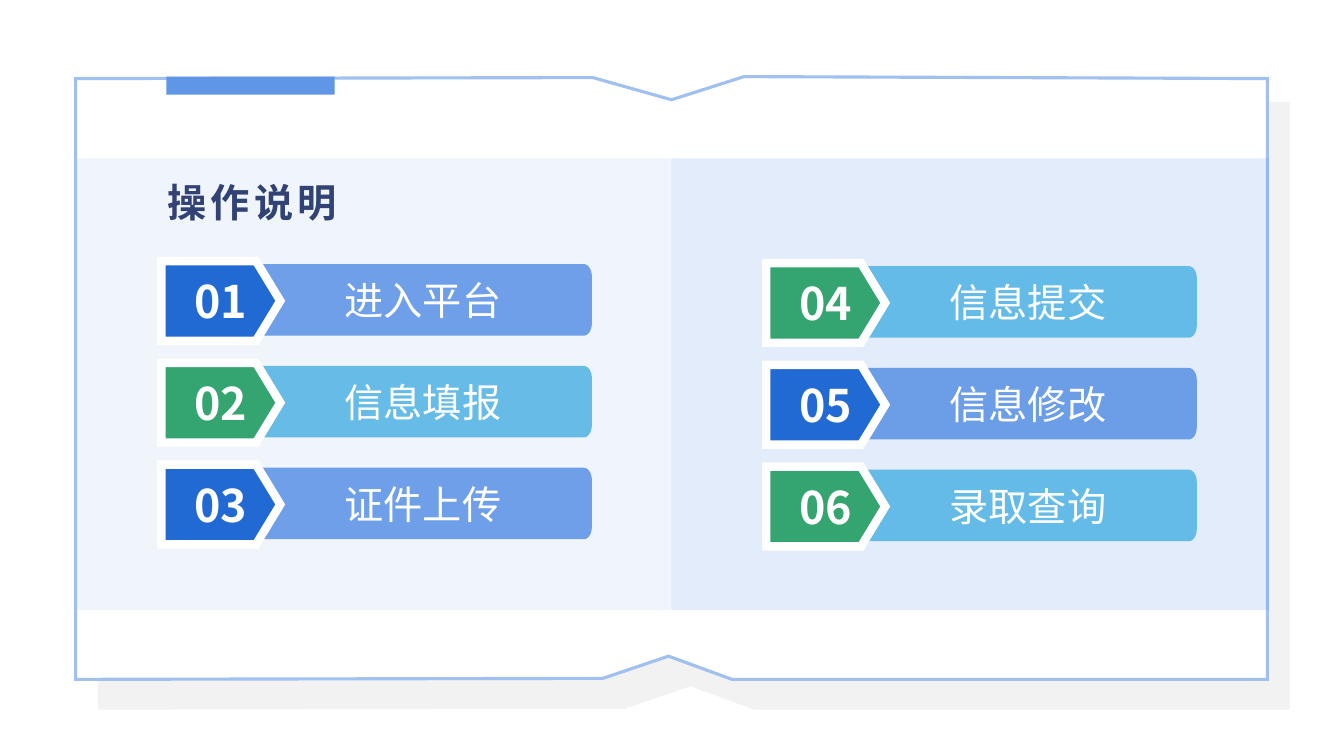
from math import cos, pi, sin

from lxml import etree
from pptx import Presentation
from pptx.dml.color import RGBColor
from pptx.enum.shapes import MSO_SHAPE
from pptx.enum.text import MSO_ANCHOR, PP_ALIGN
from pptx.oxml.ns import qn
from pptx.util import Inches, Pt

RECT = MSO_SHAPE.RECTANGLE
CENTER = PP_ALIGN.CENTER
MIDDLE, BOTTOM = MSO_ANCHOR.MIDDLE, MSO_ANCHOR.BOTTOM

FONT = "Noto Sans CJK SC"
COLORS = {
    "white": "FFFFFF", "shadow": "F2F2F2", "outline": "A0C0F0",
    "soft_blue": "6096E6", "sky": "58B6E5", "blue": "2169D3",
    "green": "34A471", "navy": "324274",
}


class Deck:
    """Holds the style and the current slide."""

    def __init__(self, prs):
        self.s = prs.slides.add_slide(prs.slide_layouts[5])

    def color(self, name):
        return RGBColor.from_string(COLORS[name])

    def style(self, sp, fill, alpha=100, line=None, width=0):
        sp.shadow.inherit = False
        sp.fill.solid()
        sp.fill.fore_color.rgb = self.color(fill)
        spPr = sp._element.spPr
        if alpha < 100:
            clr = spPr.find(qn("a:solidFill"))[0]
            etree.SubElement(clr, qn("a:alpha"), val=str(alpha * 1000))
        if line:
            sp.line.color.rgb = self.color(line)
            sp.line.width = Pt(width)
            etree.SubElement(spPr.find(qn("a:ln")), qn("a:miter"), lim="800000")
        else:
            sp.line.fill.background()

    def text(self, sp, text, size, color, bold=False, anchor=MIDDLE, inset=(0, 0), spacing=0):
        tf = sp.text_frame
        tf.word_wrap = True
        tf.vertical_anchor = anchor
        tf.margin_left = tf.margin_right = Inches(inset[0])
        tf.margin_top = tf.margin_bottom = Inches(inset[1])
        p = tf.paragraphs[0]
        p.alignment = CENTER
        r = p.add_run()
        r.text = text
        r.font.size = Pt(size)
        r.font.bold = bold
        r.font.name = FONT
        r.font.color.rgb = self.color(color)
        rPr = r._r.get_or_add_rPr()
        etree.SubElement(rPr, qn("a:ea"), typeface=FONT)
        if spacing:
            rPr.set("spc", str(spacing * 100))

    def title(self, text, x, y, w, h):
        sp = self.s.shapes.title
        sp.left, sp.top, sp.width, sp.height = map(Inches, (x, y, w, h))
        self.text(sp, text, 28, "navy", True, BOTTOM, (0.1, 0.05), 3)
        # Bring the title in front of the panels
        self.s.shapes._spTree.append(sp._element)

    def rect(self, x, y, w, h, fill, alpha=100):
        sp = self.s.shapes.add_shape(RECT, *map(Inches, (x, y, w, h)))
        self.style(sp, fill, alpha)

    def outline(self, points, fill, alpha=100, line=None, width=0):
        start, *rest = [(Inches(x), Inches(y)) for x, y in points]
        fb = self.s.shapes.build_freeform(*start)
        fb.add_line_segments(rest, close=True)
        sp = fb.convert_to_shape()
        self.style(sp, fill, alpha, line, width)
        return sp

    def bar(self, x, y, text, fill):
        w, h, rx, ry, steps = 3.35, 0.71, 0.08, 0.12, 8
        angles = [i * pi / 2 / steps for i in range(steps + 1)]
        top = [(x + w - rx + rx * sin(a), y + ry - ry * cos(a)) for a in angles]
        bottom = [(px, 2 * y + h - py) for px, py in reversed(top)]
        sp = self.outline([(x, y), *top, *bottom, (x, y + h)], fill, 90)
        self.text(sp, text, 28, "white")

    def badge(self, x, y, text, fill):
        w, h, tip = 1.18, 0.79, 0.24
        points = [(x, y), (x + w - tip, y), (x + w, y + h / 2),
                  (x + w - tip, y + h), (x, y + h)]
        sp = self.outline(points, fill, line="white", width=6)
        self.text(sp, text, 32, "white", True)


def main():
    prs = Presentation()
    prs.slide_width, prs.slide_height = Inches(13.33), Inches(7.5)
    deck = Deck(prs)

    # Open book page over its offset shadow
    page = [(0.75, 0.78), (5.88, 0.77), (6.66, 0.99), (7.38, 0.76), (12.57, 0.78),
            (12.57, 6.74), (7.26, 6.74), (6.63, 6.51), (5.98, 6.73), (0.75, 6.74)]
    stretch = 6.05 / 5.98
    deck.outline([(x + 0.22, 0.99 + (y - 0.76) * stretch) for x, y in page], "shadow")
    deck.outline(page, "white", line="outline", width=2.25)

    # Tinted panels and tab
    deck.rect(0.76, 1.57, 11.83, 4.48, "soft_blue", 9)
    deck.rect(6.66, 1.57, 5.93, 4.48, "soft_blue", 9)
    deck.rect(1.65, 0.76, 1.67, 0.18, "soft_blue")

    deck.title("操作说明", 1.35, 1.66, 2.3, 0.63)

    # Numbered steps: two columns of three, alternating colours
    steps = ["进入平台", "信息填报", "证件上传", "信息提交", "信息修改", "录取查询"]
    schemes = [("soft_blue", "blue"), ("sky", "green")]
    for i, step in enumerate(steps):
        col, row = divmod(i, 3)
        x = 1.6 + 6 * col
        y = 2.59 + 0.02 * col + 1.01 * row
        bar_fill, badge_fill = schemes[i % 2]
        deck.bar(x + 0.92, y + 0.03, step, bar_fill)
        deck.badge(x, y, f"{i + 1:02}", badge_fill)

    prs.save("out.pptx")


if __name__ == "__main__":
    main()
